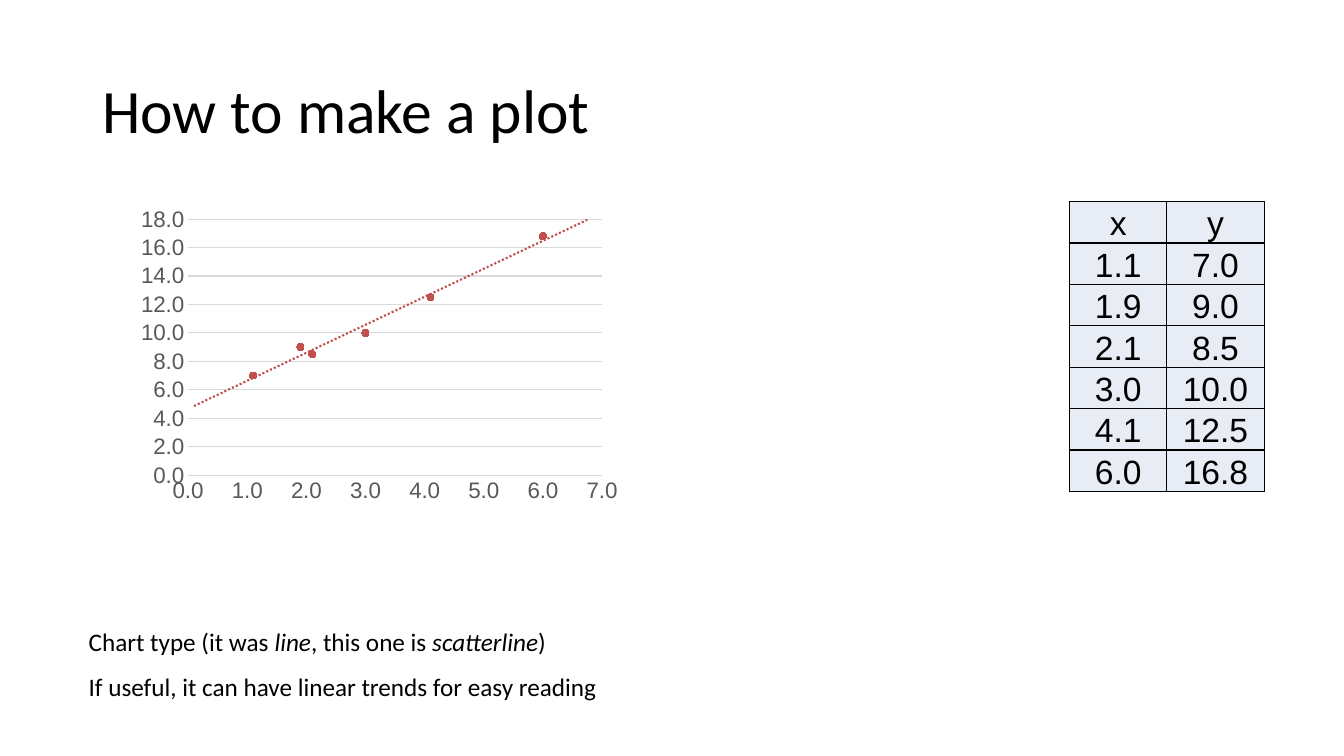
from dataclasses import dataclass

from pptx import Presentation
from pptx.chart.data import XyChartData
from pptx.dml.color import RGBColor
from pptx.enum.chart import XL_CHART_TYPE as ChartType
from pptx.enum.chart import XL_MARKER_STYLE as MarkerStyle
from pptx.enum.chart import XL_TICK_MARK as TickMark
from pptx.enum.text import MSO_ANCHOR as Anchor
from pptx.enum.text import PP_ALIGN as Align
from pptx.oxml import parse_xml
from pptx.oxml.ns import nsdecls
from pptx.slide import Slide
from pptx.util import Pt

COLORS = {
    "text": "000000",
    "axis": "595959",
    "grid": "D9D9D9",
    "cell": "E8ECF4",
    "series": "C0504D",
}
POINTS = [(1.1, 7.0), (1.9, 9.0), (2.1, 8.5), (3.0, 10.0), (4.1, 12.5), (6.0, 16.8)]
NOTES = [
    [("Chart type (it was ", False), ("line", True), (", this one is ", False),
     ("scatterline", True), (")", False)],
    [("If useful, it can have linear trends for easy reading", False)],
]


def rgb(name):
    return RGBColor.from_string(COLORS[name])


@dataclass
class PlotSlide:
    slide: Slide
    text_font: str = "Calibri"
    data_font: str = "Arial"

    def style_font(self, font, name, size, color="text"):
        font.name = name
        font.size = Pt(size)
        font.color.rgb = rgb(color)

    def text(self, box, paragraphs, size, spacing, anchor=Anchor.TOP):
        """Add a text box; each paragraph is a list of (text, italic) runs."""
        shape = self.slide.shapes.add_textbox(*map(Pt, box))
        frame = shape.text_frame
        frame.word_wrap = True
        frame.vertical_anchor = anchor
        for index, runs in enumerate(paragraphs):
            paragraph = frame.add_paragraph() if index else frame.paragraphs[0]
            paragraph.line_spacing = spacing
            for text, italic in runs:
                run = paragraph.add_run()
                run.text = text
                self.style_font(run.font, self.text_font, size)
                run.font.italic = italic

    def table(self, left, top, column_width, row_height, rows):
        columns = len(rows[0])
        table = self.slide.shapes.add_table(
            len(rows), columns, Pt(left), Pt(top),
            Pt(column_width * columns), Pt(row_height * len(rows))).table
        table.first_row = table.horz_banding = False
        for column in table.columns:
            column.width = Pt(column_width)
        for row, values in zip(table.rows, rows):
            row.height = Pt(row_height)
            for cell, value in zip(row.cells, values):
                self.cell(cell, value)

    def cell(self, cell, value):
        cell.margin_left = cell.margin_right = cell.margin_top = Pt(0.75)
        cell.margin_bottom = 0
        cell.vertical_anchor = Anchor.BOTTOM
        cell.text_frame.text = value
        paragraph = cell.text_frame.paragraphs[0]
        paragraph.alignment = Align.CENTER
        self.style_font(paragraph.runs[0].font, self.data_font, 24)
        cell.fill.solid()
        cell.fill.fore_color.rgb = rgb("cell")
        properties = cell.fill._xPr
        for index, side in enumerate(("lnL", "lnR", "lnT", "lnB")):
            properties.insert(index, parse_xml(
                f'<a:{side} {nsdecls("a")} w="{Pt(1)}"><a:solidFill>'
                f'<a:srgbClr val="{COLORS["text"]}"/></a:solidFill></a:{side}>'))

    def axis(self, axis, maximum, step):
        axis.minimum_scale, axis.maximum_scale, axis.major_unit = 0, maximum, step
        axis.major_tick_mark = axis.minor_tick_mark = TickMark.NONE
        axis.tick_labels.number_format = "0.0"
        axis.tick_labels.number_format_is_linked = False
        self.style_font(axis.tick_labels.font, self.data_font, 16, "axis")

    def scatter(self, box, points):
        data = XyChartData()
        series = data.add_series("Series 1")
        for x, y in points:
            series.add_data_point(x, y)
        chart = self.slide.shapes.add_chart(
            ChartType.XY_SCATTER, *map(Pt, box), data).chart
        chart.has_title = chart.has_legend = False
        self.style_font(chart.font, self.data_font, 16)
        self.axis(chart.category_axis, 7, 1)
        self.axis(chart.value_axis, 18, 2)
        chart.category_axis.has_major_gridlines = False
        chart.value_axis.has_major_gridlines = True
        chart.value_axis.format.line.fill.background()
        for line in (chart.category_axis.format.line,
                     chart.value_axis.major_gridlines.format.line):
            line.color.rgb = rgb("grid")
            line.width = Pt(0.75)
        plot = chart.plots[0]
        plot.vary_by_categories = False
        series = plot.series[0]
        series.smooth = False
        series.format.line.fill.background()
        series.marker.style = MarkerStyle.CIRCLE
        series.marker.size = 5
        series.marker.format.fill.solid()
        series.marker.format.fill.fore_color.rgb = rgb("series")
        series.marker.format.line.color.rgb = rgb("series")
        self.trend_line(chart)
        self.plot_layout(chart, x=0.115, y=0.057, w=0.835, h=0.83)

    def trend_line(self, chart):
        x_values = chart.element.xpath(".//c:ser/c:xVal")[0]
        x_values.addprevious(parse_xml(
            f'<c:trendline {nsdecls("c", "a")}><c:spPr><a:ln w="{Pt(1.5)}">'
            f'<a:solidFill><a:srgbClr val="{COLORS["series"]}"/></a:solidFill>'
            '<a:prstDash val="sysDot"/></a:ln></c:spPr>'
            '<c:trendlineType val="linear"/><c:forward val="0.75"/>'
            '<c:backward val="1"/><c:dispRSqr val="0"/><c:dispEq val="0"/>'
            '</c:trendline>'))

    def plot_layout(self, chart, **fractions):
        """Fix the inner plot area as fractions of the chart frame."""
        area = chart.element.xpath(".//c:plotArea")[0]
        for layout in area.xpath("./c:layout"):
            area.remove(layout)
        sizes = "".join(f'<c:{key} val="{value}"/>' for key, value in fractions.items())
        area.insert(0, parse_xml(
            f'<c:layout {nsdecls("c")}><c:manualLayout><c:layoutTarget val="inner"/>'
            '<c:xMode val="edge"/><c:yMode val="edge"/>'
            f'{sizes}</c:manualLayout></c:layout>'))


def main():
    presentation = Presentation()
    presentation.slide_width, presentation.slide_height = Pt(960), Pt(540)
    page = PlotSlide(presentation.slides.add_slide(presentation.slide_layouts[6]))
    page.text((66, 28.75, 828, 104.4), [[("How to make a plot", False)]], 44, 0.9,
              Anchor.MIDDLE)
    rows = [("x", "y")] + [(f"{x:.1f}", f"{y:.1f}") for x, y in POINTS]
    page.table(764, 144, 69.5, 27.2, rows)
    page.text((56.2, 432.7, 813, 69), NOTES, 18, 1.5)
    page.scatter((93.6, 144, 354.2, 220.3), POINTS)
    presentation.save("out.pptx")


if __name__ == "__main__":
    main()
